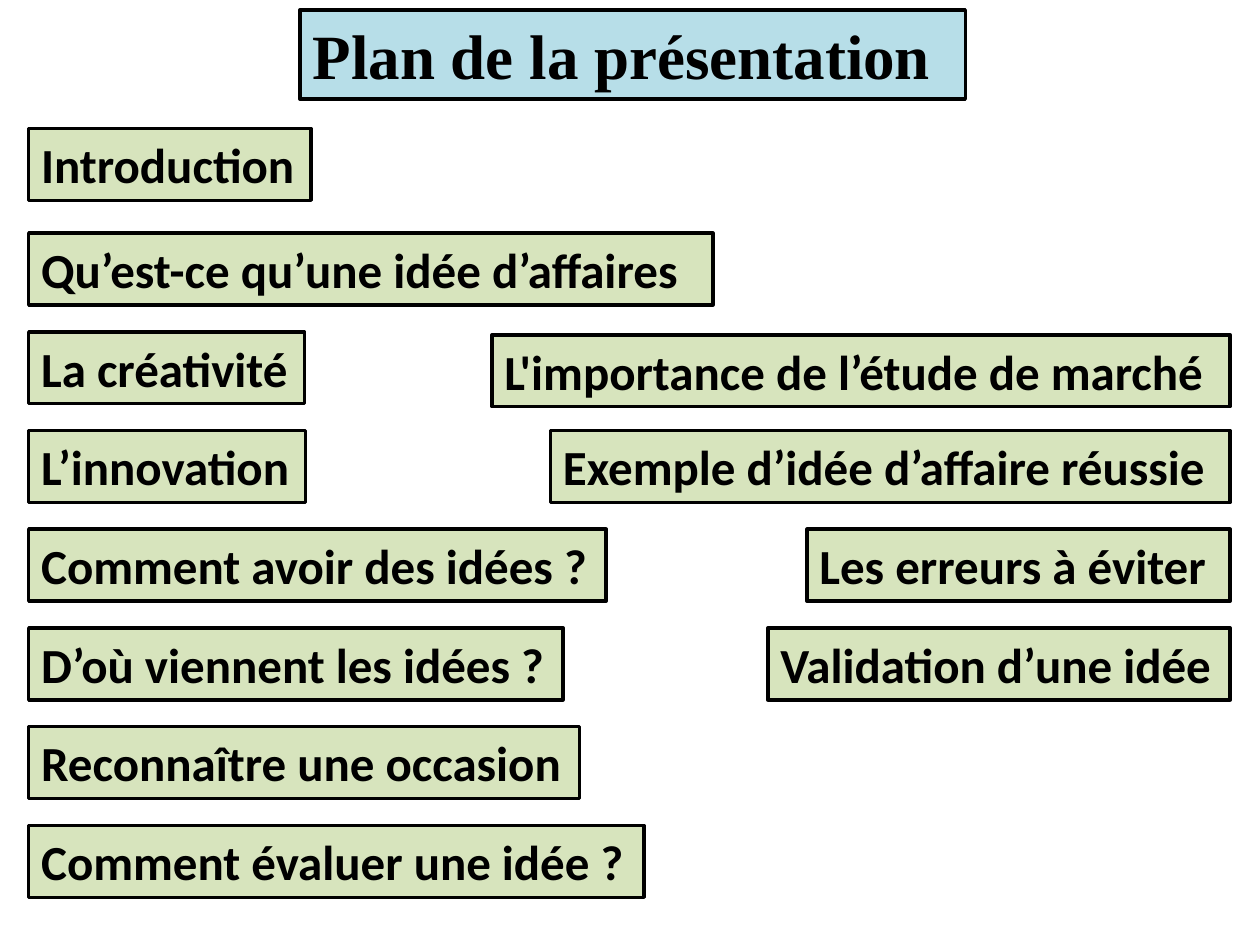
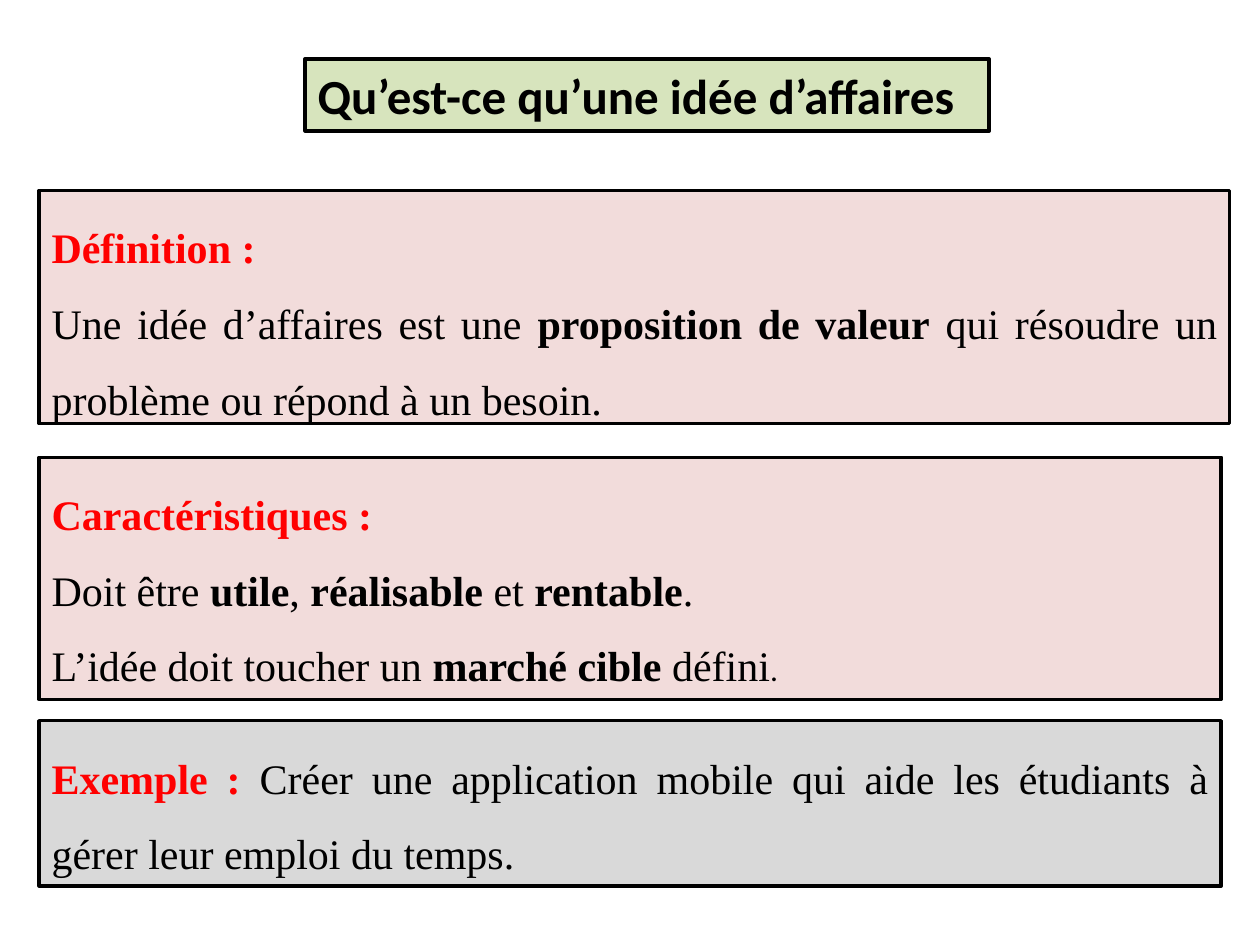
from pptx import Presentation
from pptx.dml.color import RGBColor
from pptx.enum.shapes import MSO_SHAPE
from pptx.enum.text import MSO_ANCHOR, MSO_AUTO_SIZE, PP_ALIGN
from pptx.util import Cm, Pt

RECTANGLE = MSO_SHAPE.RECTANGLE
TOP, MIDDLE = MSO_ANCHOR.TOP, MSO_ANCHOR.MIDDLE
LEFT, JUSTIFY = PP_ALIGN.LEFT, PP_ALIGN.JUSTIFY
NO_AUTOFIT = MSO_AUTO_SIZE.NONE
TITLE_ONLY = 5

COLORS = {"black": "000000", "red": "FF0000", "blue": "B7DEE8",
          "green": "D7E4BD", "pink": "F2DCDB", "grey": "D9D9D9"}
SANS, SERIF = "Calibri", "Times New Roman"

# Content: agenda entries with their box widths in cm
PLAN_TITLE = "Plan de la présentation"
IDEA_TITLE = "Qu’est-ce qu’une idée d’affaires"
INTRODUCTION = ("Introduction", 5.69)
LEFT_TOPICS = [
    (IDEA_TITLE, 13.79),
    ("La créativité", 5.56),
    ("L’innovation", 5.58),
    ("Comment avoir des idées ?", 11.64),
    ("D’où viennent les idées ?", 10.77),
    ("Reconnaître une occasion", 11.1),
    ("Comment évaluer une idée ?", 12.4),
]
RIGHT_TOPICS = [
    ("L'importance de l’étude de marché", 14.88),
    ("Exemple d’idée d’affaire réussie", 13.7),
    ("Les erreurs à éviter", 8.53),
    ("Validation d’une idée", 9.32),
]

# Content: panels as paragraphs of (text, style) spans
STYLES = {
    "heading": {"bold": True, "color": "red"},
    "plain": {"bold": False},
    "strong": {"bold": True},
    "small": {"bold": False, "font": SANS, "size": 18},
}
PANELS = [
    {"top": 3.84, "width": 24, "height": 4.7, "fill": "pink", "paragraphs": [
        [("Définition : ", "heading")],
        [("Une idée d’affaires est une ", "plain"),
         ("proposition de valeur", "strong"),
         (" qui résoudre un problème ou répond à un besoin.", "plain")],
    ]},
    {"top": 9.22, "width": 23.83, "height": 4.88, "fill": "pink", "paragraphs": [
        [("Caractéristiques :", "heading")],
        [("Doit être ", "plain"), ("utile", "strong"), (", ", "plain"),
         ("réalisable", "strong"), (" et ", "plain"),
         ("rentable", "strong"), (".", "plain")],
        [("L’idée doit toucher un ", "plain"), ("marché cible", "strong"),
         (" défini", "plain"), (".", "small")],
    ]},
    {"top": 14.53, "width": 23.83, "height": 3.33, "fill": "grey", "paragraphs": [
        [("Exemple : ", "heading"),
         ("Créer une application mobile qui aide les étudiants à gérer "
          "leur emploi du temps.", "plain")],
    ]},
]

# Layout in cm
LEFT_EDGE, RIGHT_EDGE, PANEL_LEFT = 0.58, 24.8, 0.79
INTRO_TOP, TOPIC_TOP, TOPIC_STEP, TOPIC_HEIGHT = 2.59, 4.7, 1.99, 1.45
FIRST_RIGHT_TOP = 6.75


def rgb(name):
    return RGBColor.from_string(COLORS[name])


def write(box, paragraphs, font=SANS, size=28, align=LEFT, spacing=1, anchor=TOP):
    frame = box.text_frame
    frame.word_wrap = True
    frame.auto_size = NO_AUTOFIT
    frame.vertical_anchor = anchor
    for index, spans in enumerate(paragraphs):
        para = frame.add_paragraph() if index else frame.paragraphs[0]
        para.alignment = align
        para.line_spacing = spacing
        for text, style_name in spans:
            style = STYLES[style_name]
            span = para.add_run()
            span.text = text
            span.font.name = style.get("font", font)
            span.font.size = Pt(style.get("size", size))
            span.font.bold = style["bold"]
            span.font.color.rgb = rgb(style.get("color", "black"))


def frame_box(box, fill):
    box.fill.solid()
    box.fill.fore_color.rgb = rgb(fill)
    box.line.color.rgb = rgb("black")
    box.line.width = Pt(2)


def add_box(page, left, top, width, height, fill, paragraphs, **text_format):
    box = page.shapes.add_shape(RECTANGLE, Cm(left), Cm(top), Cm(width), Cm(height))
    box.shadow.inherit = False
    frame_box(box, fill)
    write(box, paragraphs, **text_format)


def add_topic(page, left, top, text, width):
    add_box(page, left, top, width, TOPIC_HEIGHT, "green", [[(text, "strong")]])


def add_page(deck, title, left, top, width, height, fill, **text_format):
    page = deck.slides.add_slide(deck.slide_layouts[TITLE_ONLY])
    box = page.shapes.title
    box.left, box.top, box.width, box.height = Cm(left), Cm(top), Cm(width), Cm(height)
    frame_box(box, fill)
    write(box, [[(title, "strong")]], **text_format)
    return page


def build_plan(deck):
    page = add_page(deck, PLAN_TITLE, 6.05, 0.2, 13.41, 1.8, "blue",
                    font=SERIF, size=36, anchor=MIDDLE)
    add_topic(page, LEFT_EDGE, INTRO_TOP, *INTRODUCTION)
    for row, (text, width) in enumerate(LEFT_TOPICS):
        add_topic(page, LEFT_EDGE, TOPIC_TOP + row * TOPIC_STEP, text, width)
    # The right column starts beside the second row and ends on one edge
    for row, (text, width) in enumerate(RIGHT_TOPICS, start=1):
        top = FIRST_RIGHT_TOP if row == 1 else TOPIC_TOP + row * TOPIC_STEP
        add_topic(page, RIGHT_EDGE - width, top, text, width)


def build_idea(deck):
    page = add_page(deck, IDEA_TITLE, 6.15, 1.19, 13.79, TOPIC_HEIGHT, "green")
    for panel in PANELS:
        add_box(page, PANEL_LEFT, **panel, font=SERIF, size=24,
                align=JUSTIFY, spacing=1.5)


def main():
    deck = Presentation()
    deck.slide_width, deck.slide_height = Cm(25.4), Cm(19.05)
    build_plan(deck)
    build_idea(deck)
    deck.save("out.pptx")


if __name__ == "__main__":
    main()
